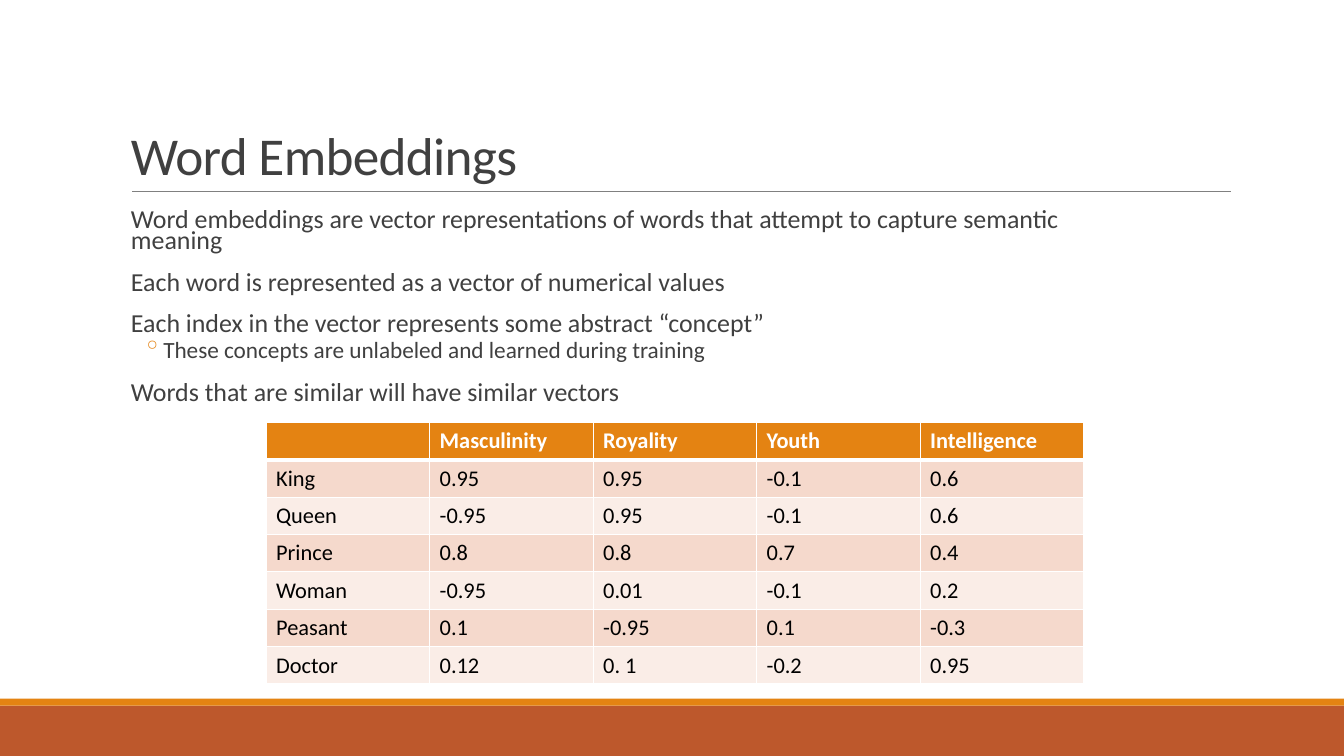
import dataclasses

import pptx
import pptx.dml.color
import pptx.enum.shapes
import pptx.enum.text
import pptx.oxml.ns
import pptx.util
from lxml import etree

WIDE = pptx.util.Inches(13.33)
HIGH = pptx.util.Inches(7.5)
qn = pptx.oxml.ns.qn


@dataclasses.dataclass(frozen=True)
class Theme:
    font: str = "Calibri"
    orange: str = "E48312"
    rust: str = "BD582C"
    rule: str = "808080"
    text: str = "404040"
    black: str = "000000"
    white: str = "FFFFFF"
    bands: tuple = ("F5D9CC", "FAEDE7")
    title: float = 38
    body: float = 18.5
    sub: float = 16.6
    cell: float = 16


THEME = Theme()

# Each point: level and wording
POINTS = [
    (0, "Word embeddings are vector representations of words that attempt to capture semantic meaning"),
    (0, "Each word is represented as a vector of numerical values"),
    (0, "Each index in the vector represents some abstract “concept”"),
    (1, "These concepts are unlabeled and learned during training"),
    (0, "Words that are similar will have similar vectors"),
]

ROWS = [
    ["", "Masculinity", "Royality", "Youth", "Intelligence"],
    ["King", "0.95", "0.95", "-0.1", "0.6"],
    ["Queen", "-0.95", "0.95", "-0.1", "0.6"],
    ["Prince", "0.8", "0.8", "0.7", "0.4"],
    ["Woman", "-0.95", "0.01", "-0.1", "0.2"],
    ["Peasant", "0.1", "-0.95", "0.1", "-0.3"],
    ["Doctor", "0.12", "0. 1", "-0.2", "0.95"],
]


def across(share):
    """Percent of the slide's width."""
    return round(WIDE * share / 100)


def down(share):
    """Percent of the slide's height."""
    return round(HIGH * share / 100)


def place(left, top, width, height):
    return across(left), down(top), across(width), down(height)


def rgb(color):
    return pptx.dml.color.RGBColor.from_string(color)


def style(para, size, color, bold=False):
    font = para.font
    font.name = THEME.font
    font.size = pptx.util.Pt(size)
    font.bold = bold
    font.color.rgb = rgb(color)


def add_band(slide, top, height, color):
    band = slide.shapes.add_shape(
        pptx.enum.shapes.MSO_SHAPE.RECTANGLE, *place(0, top, 100, height))
    band.shadow.inherit = False
    band.fill.solid()
    band.fill.fore_color.rgb = rgb(color)
    band.line.fill.background()


def add_rule(slide, left, right, top):
    rule = slide.shapes.add_connector(
        pptx.enum.shapes.MSO_CONNECTOR.STRAIGHT,
        across(left), down(top), across(right), down(top))
    rule.line.color.rgb = rgb(THEME.rule)
    rule.line.width = pptx.util.Pt(0.5)
    etree.SubElement(rule._element.spPr, qn("a:effectLst"))


def add_frame(slide, box):
    frame = slide.shapes.add_textbox(*box).text_frame
    frame.word_wrap = True
    return frame


def add_title(slide, words, box):
    frame = add_frame(slide, box)
    frame.vertical_anchor = pptx.enum.text.MSO_ANCHOR.BOTTOM
    para = frame.paragraphs[0]
    para.text = words
    para.line_spacing = 0.85
    style(para, THEME.title, THEME.text)
    para.font._element.set("spc", "-50")


def add_bullet(para):
    props = para._p.get_or_add_pPr()
    color = etree.SubElement(props, qn("a:buClr"))
    etree.SubElement(color, qn("a:srgbClr"), val=THEME.orange)
    etree.SubElement(props, qn("a:buChar"), char="◦")


def add_points(slide, points, box):
    frame = add_frame(slide, box)
    frame.margin_left = frame.margin_right = 0
    for index, (level, words) in enumerate(points):
        para = frame.add_paragraph() if index else frame.paragraphs[0]
        para.text = words
        left, hang, before, after, size = (
            (0.42, -0.2, 2, 4, THEME.sub) if level
            else (0.1, 0, 12, 2, THEME.body))
        if level:
            para.level = level
            add_bullet(para)
        props = para._p.get_or_add_pPr()
        props.set("marL", str(pptx.util.Inches(left)))
        props.set("indent", str(pptx.util.Inches(hang)))
        para.line_spacing = 0.7
        para.space_before = pptx.util.Pt(before)
        para.space_after = pptx.util.Pt(after)
        style(para, size, THEME.text)


def add_edges(cell, widths):
    props = cell._tc.get_or_add_tcPr()
    for side, width in zip("LRTB", widths):
        edge = etree.SubElement(
            props, qn("a:ln" + side), w=str(pptx.util.Pt(width)))
        fill = etree.SubElement(edge, qn("a:solidFill"))
        etree.SubElement(fill, qn("a:srgbClr"), val=THEME.white)


def fill_cell(cell, words, row):
    head = row == 0
    add_edges(cell, (1, 1, 3 if row == 1 else 1, 3 if head else 1))
    cell.fill.solid()
    cell.fill.fore_color.rgb = rgb(
        THEME.orange if head else THEME.bands[(row - 1) % 2])
    cell.text = words
    para = cell.text_frame.paragraphs[0]
    style(para, THEME.cell, THEME.white if head else THEME.black, head)
    if not words:  # keeps the empty cell as low as its row
        etree.SubElement(para._p, qn("a:endParaRPr"),
                         sz=str(THEME.cell * 100))


def add_grid(slide, rows, left, top, width, step):
    box = place(left, top, width, step * len(rows))
    table = slide.shapes.add_table(len(rows), len(rows[0]), *box).table
    table.first_row = table.horz_banding = False
    for row, line in enumerate(rows):
        for col, words in enumerate(line):
            fill_cell(table.cell(row, col), words, row)


def main():
    deck = pptx.Presentation()
    deck.slide_width, deck.slide_height = WIDE, HIGH
    slide = deck.slides.add_slide(deck.slide_layouts[6])

    # Footer bands and title rule
    add_band(slide, 93.33, 6.67, THEME.rust)
    add_band(slide, 92.4, 0.93, THEME.orange)
    add_rule(slide, 9.83, 91.6, 25.33)

    # Title and points
    add_title(slide, "Word Embeddings", place(9, 4.13, 82.5, 21.2))
    add_points(slide, POINTS, place(9, 27.2, 74.5, 29.6))

    # Table of word vectors
    add_grid(slide, ROWS, 19.8, 55.87, 60.83, 4.95)

    deck.save("out.pptx")


if __name__ == "__main__":
    main()
